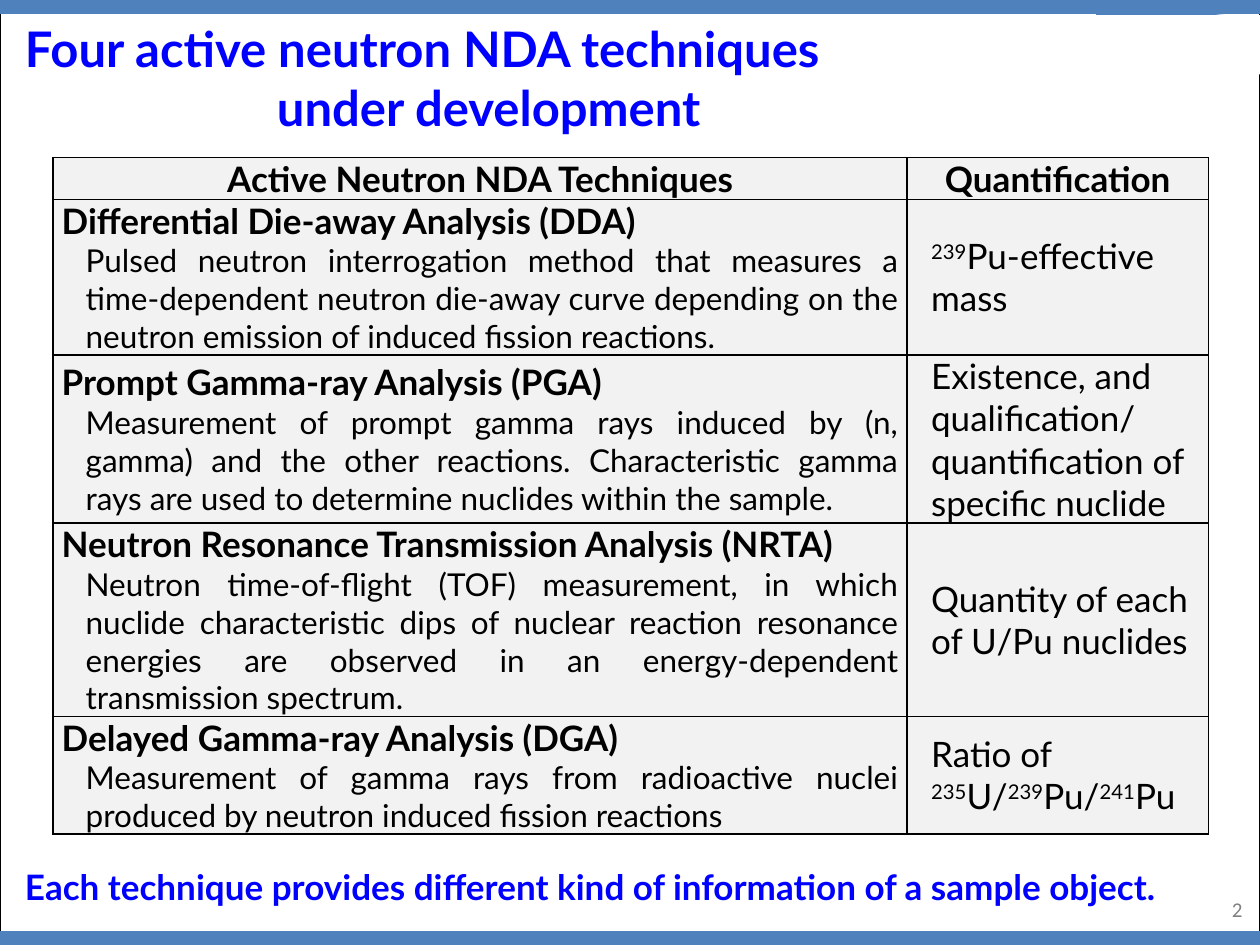
from lxml import etree
from pptx import Presentation, util as u
from pptx.dml.color import RGBColor
from pptx.enum import shapes, text
from pptx.oxml.ns import qn

BLUE, BAR, BLACK, WHITE = "0000FF", "4F81BD", "000000", "FFFFFF"
GREY, CELL = "808080", "F2F2F2"
ALIGN = text.PP_ALIGN
In = u.Inches


def color(hex_code):
    return RGBColor.from_string(hex_code)


class SlideBuilder:
    font = "Lato"

    def __init__(self, slide):
        self.slide = slide

    def paint(self, shape, fill=None, line=None):
        shape.shadow.inherit = False
        if fill:
            shape.fill.solid()
            shape.fill.fore_color.rgb = color(fill)
        else:
            shape.fill.background()
        if line:
            shape.line.color.rgb = color(line)
            shape.line.width = u.Pt(0.5)
        else:
            shape.line.fill.background()

    def rect(self, x, y, w, h, fill=None, line=None):
        shape = self.slide.shapes.add_shape(
            shapes.MSO_SHAPE.RECTANGLE, In(x), In(y), In(w), In(h))
        self.paint(shape, fill, line)

    def outline(self, points, fill):
        start, *rest = [(In(x), In(y)) for x, y in points]
        builder = self.slide.shapes.build_freeform(*start)
        builder.add_line_segments(rest, close=True)
        self.paint(builder.convert_to_shape(), fill)

    def paragraphs(self, frame, items, ink=BLACK, font=None):
        """Each item: (runs, size, bold, align, left indent); a run starting with ^ is raised."""
        for i, (runs, size, bold, align, indent) in enumerate(items):
            par = frame.add_paragraph() if i else frame.paragraphs[0]
            par.alignment = align
            if indent:
                props = par._p.get_or_add_pPr()
                props.set("marL", str(In(indent)))
                props.set("indent", "0")
            for words in runs:
                run = par.add_run()
                run.text = words.lstrip("^")
                run.font.size, run.font.bold = u.Pt(size), bold
                run.font.name = font or self.font
                run.font.color.rgb = color(ink)
                if words.startswith("^"):
                    run._r.get_or_add_rPr().set("baseline", "30000")

    def textbox(self, x, y, w, h, items, ink, font=None, wrap=True):
        frame = self.slide.shapes.add_textbox(In(x), In(y), In(w), In(h)).text_frame
        frame.word_wrap = wrap
        self.paragraphs(frame, items, ink, font)

    def cell(self, cell, items):
        cell.margin_left = cell.margin_right = In(0.07)
        cell.margin_top = cell.margin_bottom = 0
        cell.vertical_anchor = text.MSO_ANCHOR.MIDDLE
        props = cell._tc.get_or_add_tcPr()
        for side in ("lnL", "lnR", "lnT", "lnB"):
            line = etree.SubElement(props, qn("a:" + side), w=str(u.Pt(1)))
            fill = etree.SubElement(line, qn("a:solidFill"))
            etree.SubElement(fill, qn("a:srgbClr"), val=BLACK)
        cell.fill.solid()
        cell.fill.fore_color.rgb = color(CELL)
        self.paragraphs(cell.text_frame, items)

    def table(self, x, y, widths, heights, rows):
        table = self.slide.shapes.add_table(
            len(heights), len(widths), In(x), In(y),
            In(sum(widths)), In(sum(heights))).table
        table.first_row = table.horz_banding = False
        for column, width in zip(table.columns, widths):
            column.width = In(width)
        for row, height, contents in zip(table.rows, heights, rows):
            row.height = In(height)
            for cell, items in zip(row.cells, contents):
                self.cell(cell, items)


HEADERS = ["Active Neutron NDA Techniques", "Quantification"]

# Name, description, quantification paragraphs (each a list of runs)
TECHNIQUES = [
    ("Differential Die-away Analysis (DDA)",
     "Pulsed neutron interrogation method that measures a time-dependent neutron "
     "die-away curve depending on the neutron emission of induced fission reactions.",
     [["^239", "Pu-effective mass"]]),
    ("Prompt Gamma-ray Analysis (PGA)",
     "Measurement of prompt gamma rays induced by (n, gamma) and the other reactions. "
     "Characteristic gamma rays are used to determine nuclides within the sample.",
     [["Existence, and qualification/ quantification of specific nuclide"]]),
    ("Neutron Resonance Transmission Analysis (NRTA)",
     "Neutron time-of-flight (TOF) measurement, in which nuclide characteristic dips of "
     "nuclear reaction resonance energies are observed in an energy-dependent "
     "transmission spectrum.",
     [["Quantity of each of U/Pu nuclides"]]),
    ("Delayed Gamma-ray Analysis (DGA)",
     "Measurement of gamma rays from radioactive nuclei produced by neutron induced "
     "fission reactions",
     [["Ratio of"], ["^235", "U/", "^239", "Pu/", "^241", "Pu"]]),
]


def main():
    prs = Presentation()
    prs.slide_width, prs.slide_height = In(10), In(7.5)
    page = SlideBuilder(prs.slides.add_slide(prs.slide_layouts[6]))

    # Frame, bars and corner tab
    page.rect(0, 0, 10, 7.5, line=BLACK)
    for bar_top in (0, 7.39):
        page.rect(0, bar_top, 10, 0.11, fill=BAR)
    page.outline([(8.7, 0.01), (9.99, 0.15), (10, 0.55), (8.7, 0.55)], BAR)

    # Slide number
    page.textbox(7.63, 7.07, 2.33, 0.4,
                 [(["2"], 12, False, ALIGN.RIGHT, 0)], GREY, font="Calibri")

    # Technique table
    rows = [[[([header], 20, True, ALIGN.CENTER, 0)] for header in HEADERS]]
    for name, description, quantities in TECHNIQUES:
        rows.append([
            [([name], 20, True, ALIGN.JUSTIFY, 0),
             ([description], 18, False, ALIGN.JUSTIFY, 0.19)],
            [(runs, 20, False, ALIGN.LEFT, 0.12) for runs in quantities],
        ])
    page.table(0.42, 1.25, [6.78, 2.39], [0.32, 1.19, 1.3, 1.48, 0.9], rows)

    # Title and closing message
    page.textbox(0.1, 0.1, 8.87, 1.04,
                 [(["Four active neutron NDA techniques"], 28, True, ALIGN.LEFT, 0),
                  (["under development"], 28, True, ALIGN.LEFT, 2)], BLUE)
    page.textbox(0.1, 6.82, 9.93, 0.44,
                 [(["Each technique provides different kind of information of a "
                    "sample object."], 20, True, ALIGN.LEFT, 0)], BLUE, wrap=False)

    # White patch over the corner
    page.rect(8.67, 0.12, 1.37, 0.47, fill=WHITE)

    prs.save("out.pptx")


if __name__ == "__main__":
    main()
